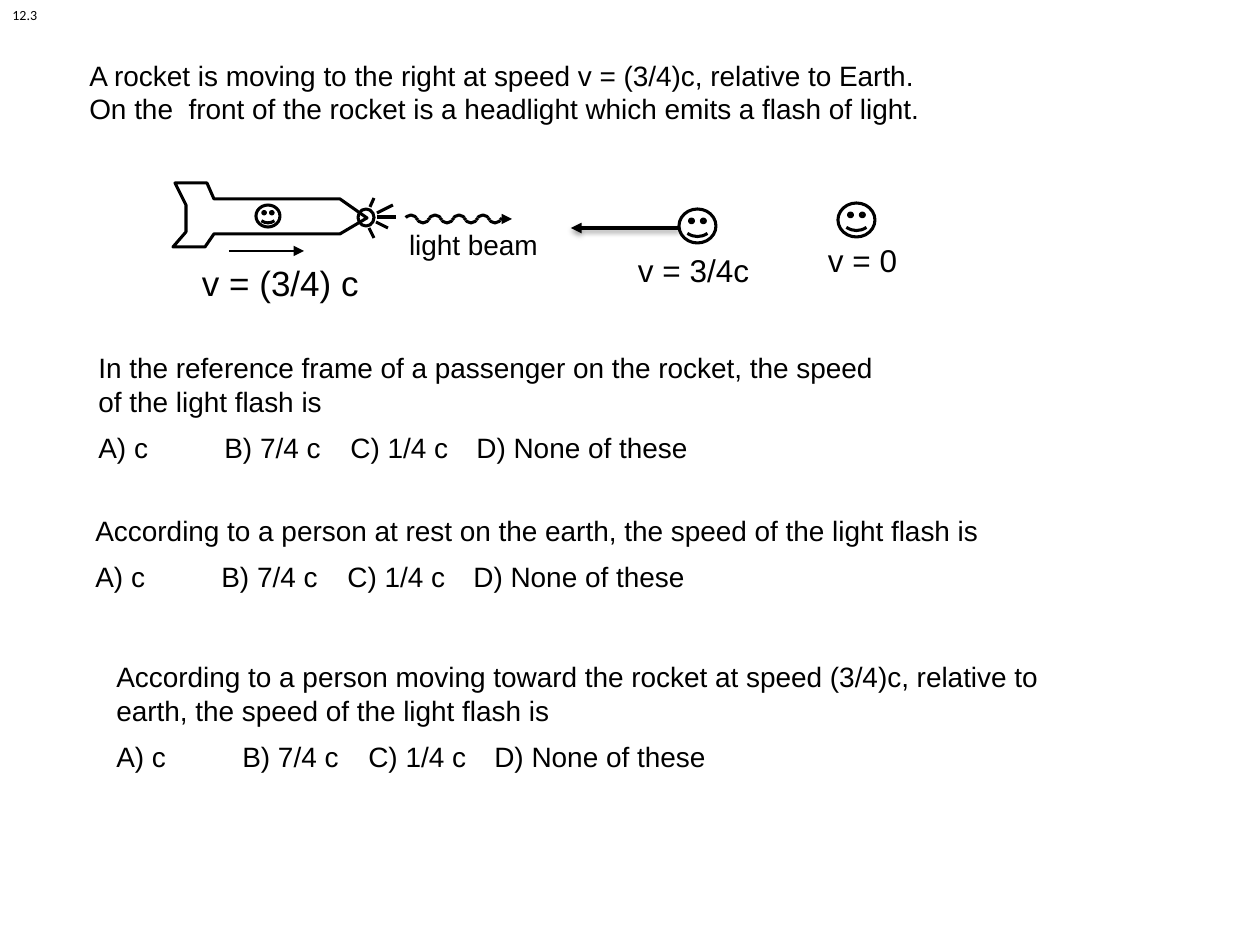
from dataclasses import dataclass

import pptx
import pptx.dml.color
import pptx.enum.shapes
import pptx.enum.text
import pptx.oxml
import pptx.oxml.ns
import pptx.util

PX = 914400 / 126
SHAPE = pptx.enum.shapes.MSO_SHAPE
ANCHOR = pptx.enum.text.MSO_ANCHOR
NS = pptx.oxml.ns.nsdecls("a")


@dataclass(frozen=True)
class Theme:
    ink: str = "000000"
    font: str = "Arial"
    number_font: str = "Calibri"
    number: int = 8
    body: int = 16
    observer: int = 18
    rocket: int = 20
    choice_gap: int = 7
    outline: float = 1.75
    motion: float = 1.25
    observer_motion: float = 2


THEME = Theme()
INK = pptx.dml.color.RGBColor.from_string(THEME.ink)
CHOICES = "A) c\tB) 7/4 c\tC) 1/4 c \tD) None of these"
CHOICE_STEP = 126


def px(length):
    return pptx.util.Emu(round(length * PX))


def add_text(shapes, box, paragraphs, size, font=THEME.font, inset=True,
             wrap=True, anchor=ANCHOR.TOP):
    frame = shapes.add_textbox(*map(px, box)).text_frame
    frame.word_wrap = wrap
    frame.vertical_anchor = anchor
    if not inset:
        frame.margin_left = frame.margin_right = 0
        frame.margin_top = frame.margin_bottom = 0
    for index, words in enumerate(paragraphs):
        paragraph = frame.add_paragraph() if index else frame.paragraphs[0]
        if index:
            paragraph.space_before = pptx.util.Pt(THEME.choice_gap)
        if "\t" in words:
            stops = "".join(f'<a:tab pos="{px(CHOICE_STEP * n)}" algn="l"/>'
                            for n in range(1, words.count("\t") + 1))
            paragraph._p.get_or_add_pPr().append(
                pptx.oxml.parse_xml(f"<a:tabLst {NS}>{stops}</a:tabLst>"))
        run = paragraph.add_run()
        run.text = words
        run.font.name = font
        run.font.size = pptx.util.Pt(size)
        run.font.color.rgb = INK


def ink_outline(shape):
    shape.shadow.inherit = False
    shape.fill.background()
    shape.line.color.rgb = INK
    shape.line.width = pptx.util.Pt(THEME.outline)


def add_outlined(shapes, preset, box):
    shape = shapes.add_shape(preset, *map(px, box))
    ink_outline(shape)
    return shape


def add_line(shapes, start, end, width=THEME.outline, arrow=False, shadow=False):
    line = shapes.add_connector(pptx.enum.shapes.MSO_CONNECTOR.STRAIGHT,
                                *map(px, start + end))
    line.line.color.rgb = INK
    line.line.width = pptx.util.Pt(width)
    if arrow:
        line.line._get_or_add_ln().append(
            pptx.oxml.parse_xml(f'<a:tailEnd {NS} type="triangle"/>'))
    soft = (f'<a:outerShdw blurRad="39370" dist="20320" dir="5400000" rotWithShape="0">'
            f'<a:srgbClr val="{THEME.ink}"><a:alpha val="38000"/></a:srgbClr>'
            f'</a:outerShdw>') if shadow else ""
    line._element.spPr.append(
        pptx.oxml.parse_xml(f"<a:effectLst {NS}>{soft}</a:effectLst>"))


def draw_rocket(shapes, left, top):
    def at(x, y):
        return left + x, top + y

    # Body, passenger and headlight
    hull = [(2, 0), (13, 22), (13, 49), (0, 64), (32, 64), (41, 51),
            (167, 51), (194, 35), (167, 16), (41, 16), (34, 0)]
    builder = shapes.build_freeform(*hull[0], scale=PX)
    builder.add_line_segments(hull[1:], close=True)
    ink_outline(builder.convert_to_shape(px(left), px(top)))
    add_outlined(shapes, SHAPE.SMILEY_FACE, at(83, 22) + (24, 22))
    add_outlined(shapes, SHAPE.OVAL, at(185, 26) + (16, 17))
    # Flash rays
    rays = [((197, 24), (201, 15)), ((204, 30), (220, 22)),
            ((203, 39), (215, 45)), ((196, 45), (201, 55)),
            ((204, 34), (223, 34))]
    for inner, outer in rays:
        add_line(shapes, at(*inner), at(*outer))
    # Motion
    add_line(shapes, at(56, 68), at(131, 68), THEME.motion, arrow=True)
    add_text(shapes, at(29, 79) + (174, 49), ["v = (3/4) c"], THEME.rocket,
             inset=False)


def draw_light_beam(shapes, left, top):
    beam = shapes.add_group_shape().shapes
    half_waves, step, chord = 8, 12, 10
    arc_width, arc_height, crest = 16, 22, 4
    for index in range(half_waves):
        x = left + step * index
        is_crest = index % 2 == 0
        arc_top = top - crest if is_crest else top + crest - arc_height
        arc = add_outlined(beam, SHAPE.ARC, (x + (chord - arc_width) // 2, arc_top,
                                             arc_width, arc_height))
        # Arc adjustments count 0.6 per degree
        for end, degrees in enumerate((238, 302) if is_crest else (58, 122)):
            arc.adjustments[end] = degrees * 0.6
        slope = 1 if is_crest else -1
        add_line(beam, (x + chord, top - slope), (x + step, top + slope))
    tip = left + step * half_waves
    add_line(beam, (tip, top), (tip + 10, top), arrow=True)
    add_text(shapes, (left + 3, top + 9, 130, 43), ["light beam"], THEME.body,
             inset=False)


def draw_observer(shapes, face_left, face_top, label_box, speed, travel=0):
    observer = shapes.add_group_shape().shapes
    add_outlined(observer, SHAPE.SMILEY_FACE, (face_left, face_top, 37, 34))
    dx, dy, width, height = label_box
    add_text(observer, (face_left + dx, face_top + dy, width, height), [speed],
             THEME.observer, inset=False)
    if travel:
        y = face_top + 19
        add_line(observer, (face_left, y), (face_left - travel, y),
                 THEME.observer_motion, arrow=True, shadow=True)


def write_question(shapes, box, question):
    add_text(shapes, box, [question, CHOICES], THEME.body, anchor=ANCHOR.MIDDLE)


def main():
    deck = pptx.Presentation()
    deck.slide_width, deck.slide_height = px(1260), px(945)
    shapes = deck.slides.add_slide(deck.slide_layouts[6]).shapes

    # Slide number and setting
    add_text(shapes, (0, 0, 50, 30), ["12.3"], THEME.number, THEME.number_font,
             wrap=False)
    add_text(shapes, (77, 52, 859, 118), [
        "A rocket is moving to the right at speed v = (3/4)c, relative to Earth.  "
        "On the  front of the rocket is a headlight which emits a flash of light."],
        THEME.body)

    # Diagram
    draw_rocket(shapes, 173, 183)
    draw_light_beam(shapes, 406, 219)
    draw_observer(shapes, 679, 209, (-41, 42, 122, 33), "v = 3/4c", travel=108)
    draw_observer(shapes, 838, 203, (-10, 38, 83, 33), "v = 0")

    # Questions
    write_question(shapes, (86, 344, 825, 127),
                   "In the reference frame of a passenger on the rocket, "
                   "the speed of the light flash is")
    write_question(shapes, (83, 507, 912, 93),
                   "According to a person at rest on the earth, "
                   "the speed of the light flash is")
    write_question(shapes, (104, 653, 1022, 127),
                   "According to a person moving toward the rocket at speed (3/4)c, "
                   "relative to earth, the speed of the light flash is")

    deck.save("out.pptx")


if __name__ == "__main__":
    main()
